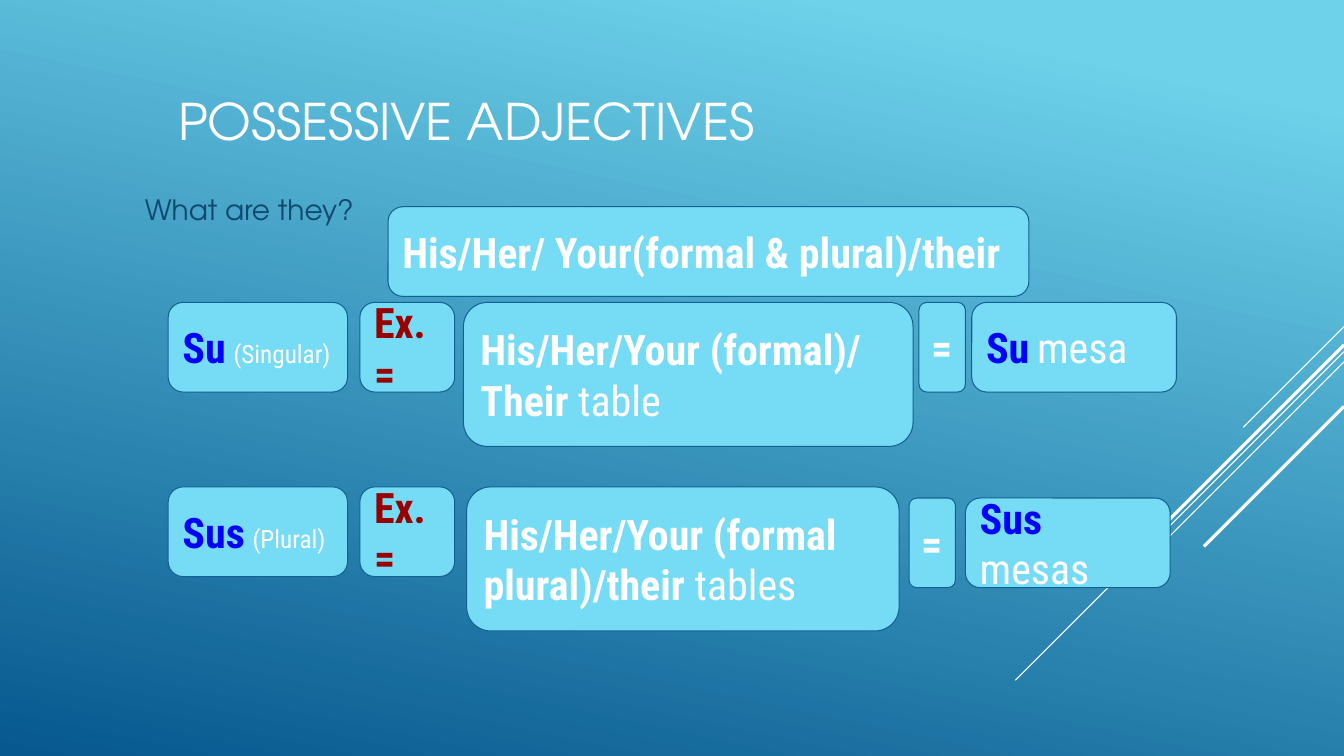
from lxml import etree
from pptx import Presentation
from pptx.dml.color import RGBColor
from pptx.enum.shapes import MSO_CONNECTOR, MSO_SHAPE
from pptx.enum.text import MSO_ANCHOR
from pptx.oxml.ns import qn
from pptx.util import Cm, Pt

COLORS = {
    "sky": "6ED2EB", "deep": "06588E", "white": "FFFFFF", "navy": "0F496F",
    "box": "76DBF4", "border": "146194", "blue": "0000FF", "red": "980000",
}
HEADING_FONT, CARD_FONT = "TeX Gyre Adventor", "Roboto Condensed"
SLIDE_WIDTH, SLIDE_HEIGHT = 33.87, 19.05

# Content: each run is (text, size, color, bold)
title = [("POSSESSIVE ADJECTIVES", 36, "white", False)]
question = [("What are they?", 20, "navy", False)]
meaning = [("His/Her/ Your(formal & plural)/their", 30, "white", True)]
example = [("Ex.=", 30, "red", True)]
equals = [("=", 30, "white", True)]

# Each form: adjective, number, owners, English noun, Spanish noun
forms = [
    ("Su", "(Singular)", "His/Her/Your (formal)/ Their ", "table", "mesa"),
    ("Sus", "(Plural)", "His/Her/Your (formal plural)/their ", "tables", "mesas"),
]

# Layout in cm: card height and row top, then (left, width) of English, "=", Spanish
CARD_HEIGHT, PHRASE_HEIGHT = 2.26, 3.63
ADJECTIVE, EXAMPLE = (4.24, 4.52), (9.07, 2.39)
rows = [
    (7.62, 7.62, (11.68, 11.33), (23.16, 1.17), (24.49, 5.16)),
    (12.27, 12.55, (11.76, 10.9), (22.91, 1.17), (24.33, 5.16)),
]
# Diagonals from the right edge: start height, run, weight
diagonals = [(8.23, 2.54, 0.75), (8.86, 8.28, 0.75), (9.12, 5.26, 0.75),
             (8.69, 4.85, 2.25), (10.24, 3.53, 2.25)]

deck = Presentation()
deck.slide_width, deck.slide_height = Cm(SLIDE_WIDTH), Cm(SLIDE_HEIGHT)
slide = deck.slides.add_slide(deck.slide_layouts[6])


def rgb(name):
    return RGBColor.from_string(COLORS[name])


def write(holder, runs, font=CARD_FONT, anchor=MSO_ANCHOR.MIDDLE):
    frame = holder.text_frame
    frame.word_wrap = True
    frame.vertical_anchor = anchor
    frame.margin_left = frame.margin_right = Cm(0.25)
    frame.margin_top = frame.margin_bottom = Cm(0.25)
    paragraph = frame.paragraphs[0]
    paragraph.alignment = 1
    for text, size, color, bold in runs:
        run = paragraph.add_run()
        run.text = text
        run.font.name, run.font.size, run.font.bold = font, Pt(size), bold
        run.font.color.rgb = rgb(color)


def add_heading(runs, left, top, width, height):
    heading = slide.shapes.add_textbox(Cm(left), Cm(top), Cm(width), Cm(height))
    write(heading, runs, font=HEADING_FONT, anchor=MSO_ANCHOR.TOP)


def add_card(runs, span, top, height=CARD_HEIGHT):
    left, width = span
    card = slide.shapes.add_shape(MSO_SHAPE.FLOWCHART_ALTERNATE_PROCESS,
                                  Cm(left), Cm(top), Cm(width), Cm(height))
    card.shadow.inherit = False
    card.fill.solid()
    card.fill.fore_color.rgb = rgb("box")
    card.line.color.rgb = rgb("border")
    card.line.width = Pt(0.75)
    write(card, runs)


# Background
backdrop = slide.background.fill
backdrop.gradient()
backdrop.gradient_angle = 360 - 102
for stop, (position, color) in zip(backdrop.gradient_stops, [(0.1, "sky"), (1, "deep")]):
    stop.position = position
    stop.color.rgb = rgb(color)

# Diagonal lines
for start, reach, weight in diagonals:
    diagonal = slide.shapes.add_connector(
        MSO_CONNECTOR.STRAIGHT, Cm(SLIDE_WIDTH), Cm(start),
        Cm(SLIDE_WIDTH - reach), Cm(start + reach))
    diagonal.line.color.rgb = rgb("white")
    diagonal.line.width = Pt(weight)
    etree.SubElement(diagonal._element.spPr, qn("a:effectLst"))

# Headings
add_heading(title, 4.24, 2.01, 23.67, 1.6)
add_heading(question, 3.4, 4.6, 23.67, 1.4)
add_card(meaning, (9.78, 16.15), 5.21)

# One row of cards per form
for form, row in zip(forms, rows):
    adjective, number, owners, english, spanish = form
    top, answer_top, phrase_span, equals_span, answer_span = row
    lead = [(adjective, 30, "blue", True), (" ", 24, "white", False)]
    add_card(lead + [(number, 18, "white", False)], ADJECTIVE, top)
    add_card(example, EXAMPLE, top)
    add_card([(owners, 30, "white", True), (english, 30, "white", False)],
             phrase_span, top, PHRASE_HEIGHT)
    add_card(equals, equals_span, answer_top)
    add_card(lead + [(spanish, 30, "white", False)], answer_span, answer_top)

deck.save("out.pptx")
